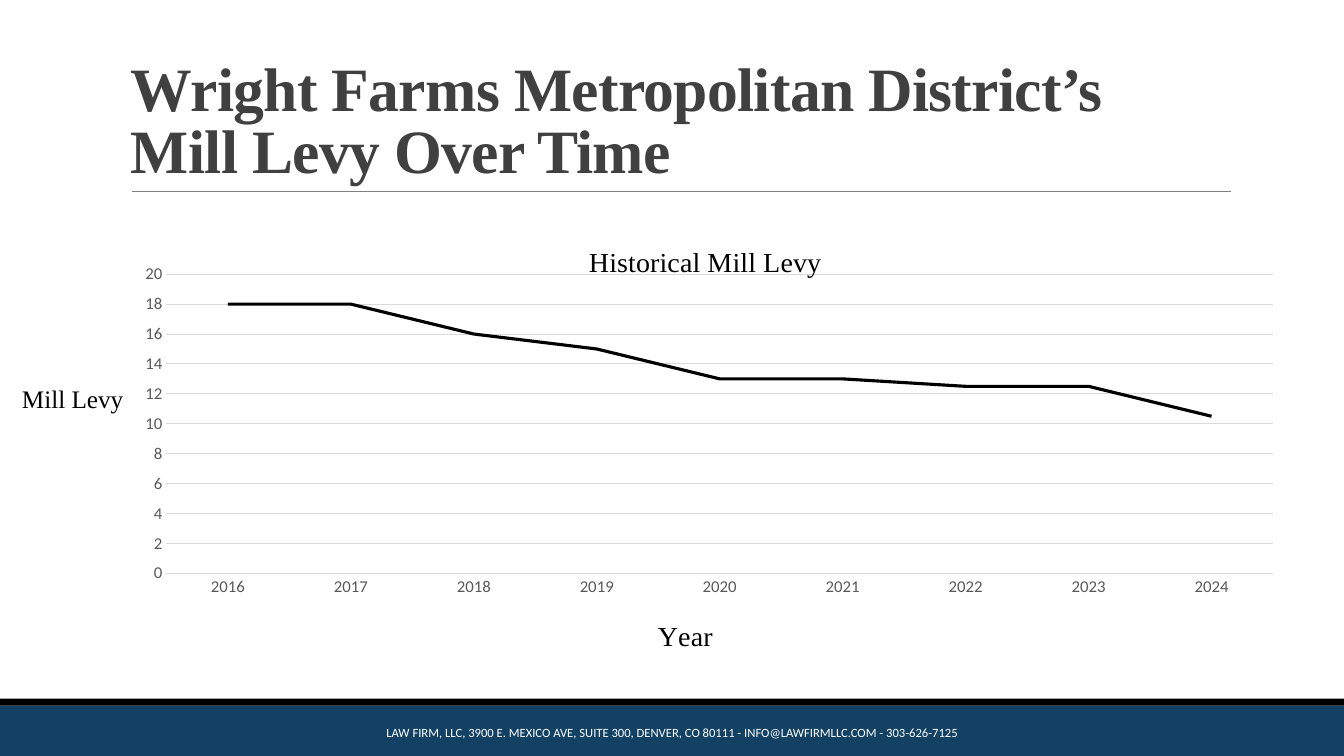
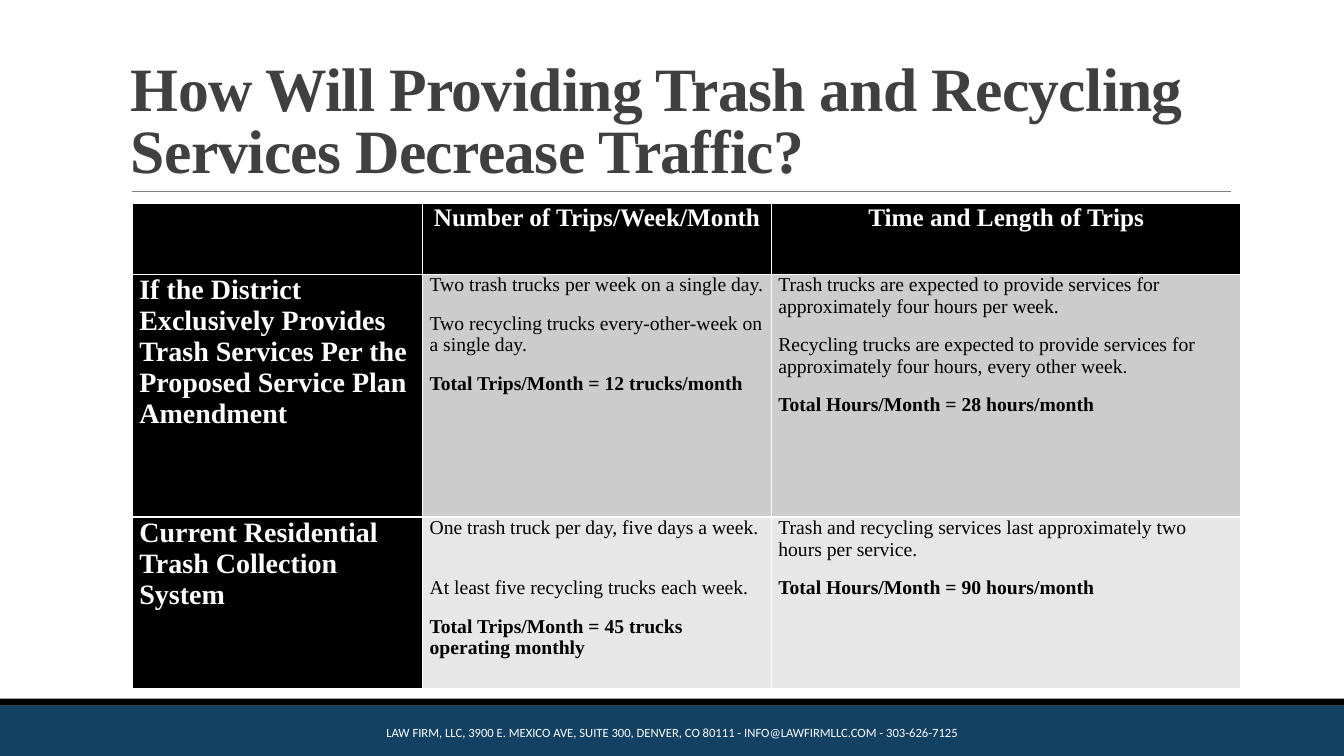
"""Build two slides on a district's mill levy and its trash collection trips."""
from lxml.etree import SubElement
from pptx import Presentation
from pptx.chart.data import CategoryChartData
from pptx.dml.color import RGBColor
from pptx.enum.chart import XL_CHART_TYPE, XL_TICK_MARK
from pptx.enum.shapes import MSO_CONNECTOR, MSO_SHAPE
from pptx.enum.text import MSO_ANCHOR, PP_ALIGN
from pptx.oxml.ns import qn
from pptx.util import Pt

NAVY = RGBColor(0x12, 0x41, 0x63)
BLACK = RGBColor(0x00, 0x00, 0x00)
WHITE = RGBColor(0xFF, 0xFF, 0xFF)
CHARCOAL = RGBColor(0x40, 0x40, 0x40)
RULE_GRAY = RGBColor(0x80, 0x80, 0x80)
LABEL_GRAY = RGBColor(0x59, 0x59, 0x59)
GRID_GRAY = RGBColor(0xD9, 0xD9, 0xD9)
DARK_ROW = RGBColor(0xCC, 0xCC, 0xCC)
LIGHT_ROW = RGBColor(0xE7, 0xE7, 0xE7)
SERIF = "Times New Roman"
SANS = "Calibri"
FOOTER = "LAW FIRM, LLC, 3900 E. MEXICO AVE, SUITE 300, DENVER, CO 80111 - INFO@LAWFIRMLLC.COM - 303-626-7125"
TITLES = [
    "Wright Farms Metropolitan District’s Mill Levy Over Time",
    "How Will Providing Trash and Recycling Services Decrease Traffic?",
]


def style(font, size, color, name=SERIF, bold=False):
    font.size, font.name, font.bold = Pt(size), name, bold
    font.color.rgb = color


def set_layout(parent, **settings):
    layout = parent.find(qn("c:layout"))
    if layout is None:
        layout = parent.makeelement(qn("c:layout"))
        parent.insert(0, layout)
    manual = SubElement(layout, qn("c:manualLayout"))
    for key, value in settings.items():
        SubElement(manual, qn("c:" + key)).set("val", str(value))


deck = Presentation()
deck.slide_width, deck.slide_height = Pt(960), Pt(540)
pages = []
for title in TITLES:
    page = deck.slides.add_slide(deck.slide_layouts[6])
    pages.append(page)
    for top, height, color in [(504, 36, NAVY), (499, 5, BLACK)]:
        band = page.shapes.add_shape(MSO_SHAPE.RECTANGLE, 0, Pt(top), Pt(960), Pt(height))
        band.shadow.inherit = False
        band.fill.solid()
        band.fill.fore_color.rgb = color
        band.line.fill.background()

    rule = page.shapes.add_connector(MSO_CONNECTOR.STRAIGHT, Pt(94.3), Pt(136.8), Pt(879), Pt(136.8))
    rule.line.color.rgb = RULE_GRAY
    rule.line.width = Pt(0.5)
    SubElement(rule._element.spPr, qn("a:effectLst"))

    box = page.shapes.add_textbox(Pt(86.4), Pt(22.4), Pt(792), Pt(114.4))
    box.text_frame.word_wrap = True
    box.text_frame.vertical_anchor = MSO_ANCHOR.BOTTOM
    para = box.text_frame.paragraphs[0]
    para.line_spacing = 0.85
    style(para.font, 44, CHARCOAL, bold=True)
    span = para.add_run()
    span.text = title
    span._r.get_or_add_rPr().set("spc", "-50")

    box = page.shapes.add_textbox(Pt(264), Pt(508.5), Pt(432), Pt(28.8))
    box.text_frame.word_wrap = True
    box.text_frame.vertical_anchor = MSO_ANCHOR.MIDDLE
    para = box.text_frame.paragraphs[0]
    para.text = FOOTER
    para.alignment = PP_ALIGN.CENTER
    style(para.font, 9, WHITE, SANS)

levy_page, trips_page = pages

levies = CategoryChartData()
levies.categories = [str(year) for year in range(2016, 2025)]
levies.add_series("Series 1", [18, 18, 16, 15, 13, 13, 12.5, 12.5, 10.5])
chart = levy_page.shapes.add_chart(
    XL_CHART_TYPE.LINE, Pt(86.4), Pt(155.5), Pt(833), Pt(316.8), levies
).chart
chart.has_legend = False
style(chart.font, 10, BLACK, SANS)
chart.plots[0].vary_by_categories = False
line = chart.plots[0].series[0]
line.smooth = False
line.format.line.color.rgb = BLACK
line.format.line.width = Pt(2.25)

years, mills = chart.category_axis, chart.value_axis
for axis in (years, mills):
    axis.major_tick_mark = axis.minor_tick_mark = XL_TICK_MARK.NONE
    style(axis.tick_labels.font, 12, LABEL_GRAY, SANS)
mills.minimum_scale, mills.maximum_scale, mills.major_unit = 0, 20, 2
mills.format.line.fill.background()
for grid_line in (years.format.line, mills.major_gridlines.format.line):
    grid_line.color.rgb = GRID_GRAY
    grid_line.width = Pt(0.75)

set_layout(chart._chartSpace.chart.plotArea, layoutTarget="inner", xMode="edge", yMode="edge",
           x=0.039, y=0.13, w=0.949, h=0.687)
for heading, text, left, top in [
    (chart.chart_title, "Historical Mill Levy", 0.397, 0.05),
    (years.axis_title, "Year", 0.456, 0.91),
]:
    para = heading.text_frame.paragraphs[0]
    para.text = text
    style(para.font, 20, BLACK)
    set_layout(heading._element, xMode="edge", yMode="edge", x=left, y=top)

box = levy_page.shapes.add_textbox(Pt(8.6), Pt(270), Pt(92.2), Pt(28.8))
box.text_frame.word_wrap = False
para = box.text_frame.paragraphs[0]
para.text = "Mill Levy"
style(para.font, 18, BLACK)

ROWS = [
    (50.4, BLACK, [[], ["Number of Trips/Week/Month"], ["Time and Length of Trips"]]),
    (173.5, DARK_ROW, [
        ["If the District Exclusively Provides Trash Services Per the Proposed Service Plan Amendment"],
        ["Two trash trucks per week on a single day.",
         "Two recycling trucks every-other-week on a single day.",
         "Total Trips/Month = 12 trucks/month"],
        ["Trash trucks are expected to provide services for approximately four hours per week.",
         "Recycling trucks are expected to provide services for approximately four hours, every other week.",
         "Total Hours/Month = 28 hours/month"],
    ]),
    (122.4, LIGHT_ROW, [
        ["Current Residential Trash Collection System"],
        ["One trash truck per day, five days a week.",
         "At least five recycling trucks each week.",
         "Total Trips/Month = 45 trucks operating monthly"],
        ["Trash and recycling services last approximately two hours per service.",
         "Total Hours/Month = 90 hours/month"],
    ]),
]
table = trips_page.shapes.add_table(3, 3, Pt(94.5), Pt(145.4), Pt(792), Pt(346.3)).table
for column, width in zip(table.columns, (207.4, 249.1, 335.5)):
    column.width = Pt(width)
for row_index, (height, fill, contents) in enumerate(ROWS):
    table.rows[row_index].height = Pt(height)
    for column_index, lines in enumerate(contents):
        cell = table.cell(row_index, column_index)
        is_header = row_index == 0
        is_label = column_index == 0
        cell.fill.solid()
        cell.fill.fore_color.rgb = BLACK if is_label else fill
        cell.margin_left = cell.margin_right = Pt(5)
        cell.margin_top = cell.margin_bottom = 0
        for index, text in enumerate(lines):
            para = cell.text_frame.paragraphs[0] if index == 0 else cell.text_frame.add_paragraph()
            para.text = text
            para.space_after = Pt(27.5 if text.startswith("One trash") else 12)
            if is_header:
                para.alignment = PP_ALIGN.CENTER
                style(para.font, 18, WHITE, bold=True)
            elif is_label:
                style(para.font, 20, WHITE, bold=True)
            else:
                style(para.font, 14, BLACK, bold=text.startswith("Total"))

deck.save("out.pptx")
